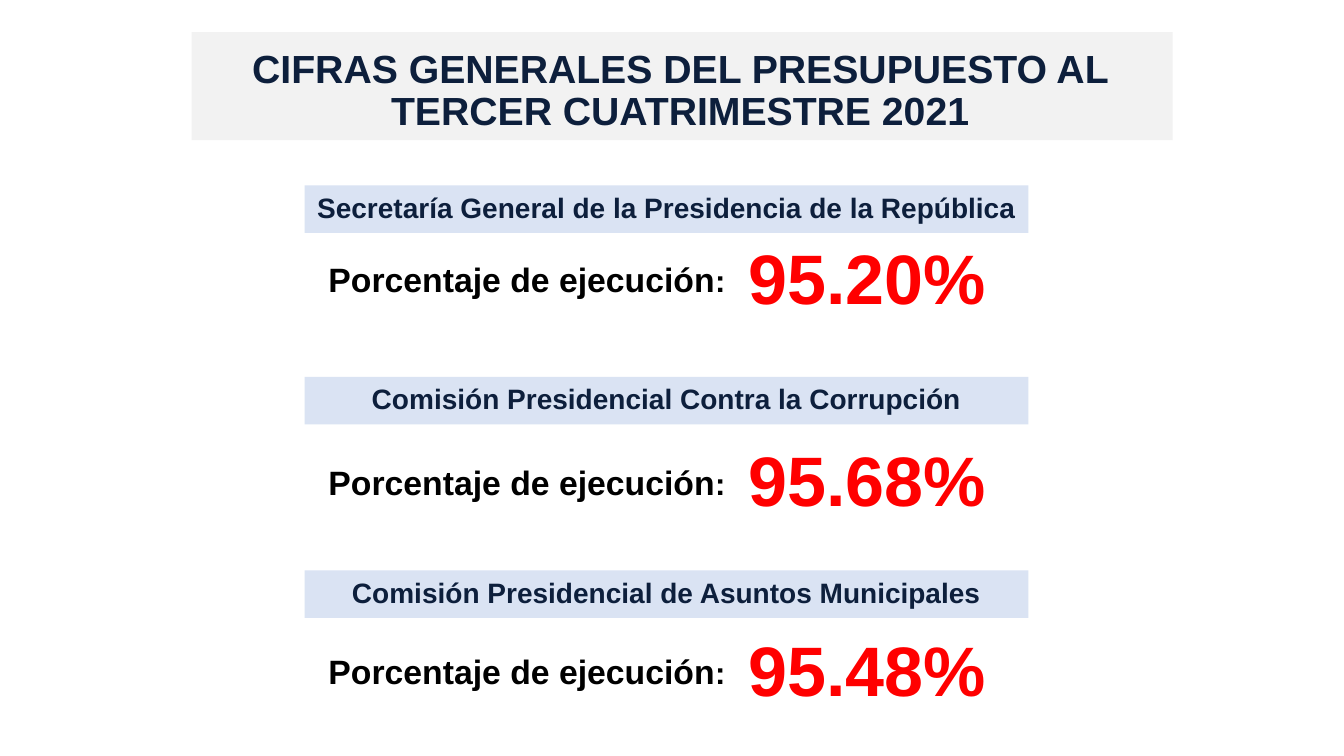
"""Builds the slide of budget execution figures for the third four-month period of 2021."""
from pptx import Presentation
from pptx.dml.color import RGBColor
from pptx.enum.shapes import MSO_SHAPE
from pptx.enum.text import MSO_ANCHOR, MSO_AUTO_SIZE, PP_ALIGN
from pptx.util import Inches, Pt

RECTANGLE = MSO_SHAPE.RECTANGLE
MIDDLE = MSO_ANCHOR.MIDDLE
NO_AUTOFIT = MSO_AUTO_SIZE.NONE
LEFT, CENTER, RIGHT = PP_ALIGN.LEFT, PP_ALIGN.CENTER, PP_ALIGN.RIGHT

NAVY, BLACK, RED = "0D1F3C", "000000", "FF0000"
GREY, PALE_BLUE = "F2F2F2", "DAE3F3"

INSTITUTIONS = [
    ("Secretaría General de la Presidencia de la República", "95.20%", 1.84, 2.77),
    ("Comisión Presidencial Contra la Corrupción", "95.68%", 3.74, 4.78),
    ("Comisión Presidencial de Asuntos Municipales", "95.48%", 5.66, 6.66),
]


def write(shape, runs, color, align, spacing=1.0):
    frame = shape.text_frame
    frame.word_wrap = True
    frame.auto_size = NO_AUTOFIT
    frame.vertical_anchor = MIDDLE
    paragraph = frame.paragraphs[0]
    paragraph.alignment = align
    paragraph.line_spacing = spacing
    for text, size in runs:
        run = paragraph.add_run()
        run.text = text
        run.font.name = "Arial"
        run.font.size = Pt(size)
        run.font.bold = True
        run.font.color.rgb = RGBColor.from_string(color)


def add_band(left, top, width, height, color):
    band = slide.shapes.add_shape(
        RECTANGLE, Inches(left), Inches(top), Inches(width), Inches(height))
    band.shadow.inherit = False
    band.fill.solid()
    band.fill.fore_color.rgb = RGBColor.from_string(color)
    band.line.fill.background()
    return band


prs = Presentation()
prs.slide_width, prs.slide_height = Inches(13.33), Inches(7.5)
slide = prs.slides.add_slide(prs.slide_layouts[5])

title = slide.shapes.title
title_band = add_band(1.9, 0.32, 9.73, 1.07, GREY)
title._element.addprevious(title_band._element)
title.left, title.top = Inches(2), Inches(0.61)
title.width, title.height = Inches(9.49), Inches(0.6)
write(title, [("CIFRAS GENERALES DEL PRESUPUESTO AL TERCER CUATRIMESTRE 2021", 28)],
      NAVY, CENTER, 0.9)

for institution, percentage, band_top, middle in INSTITUTIONS:
    name_band = add_band(3.02, band_top, 7.18, 0.47, PALE_BLUE)
    write(name_band, [(institution, 20)], NAVY, CENTER, 0.9)

    label = slide.shapes.add_textbox(
        Inches(3.16), Inches(middle - 0.25), Inches(4.2), Inches(0.5))
    write(label, [("Porcentaje de ejecución", 24.1), (":", 22.2)], BLACK, LEFT)

    figure = slide.shapes.add_textbox(
        Inches(7.2), Inches(middle - 0.48), Inches(2.68), Inches(0.9))
    write(figure, [(percentage, 50)], RED, RIGHT)

prs.save("out.pptx")
